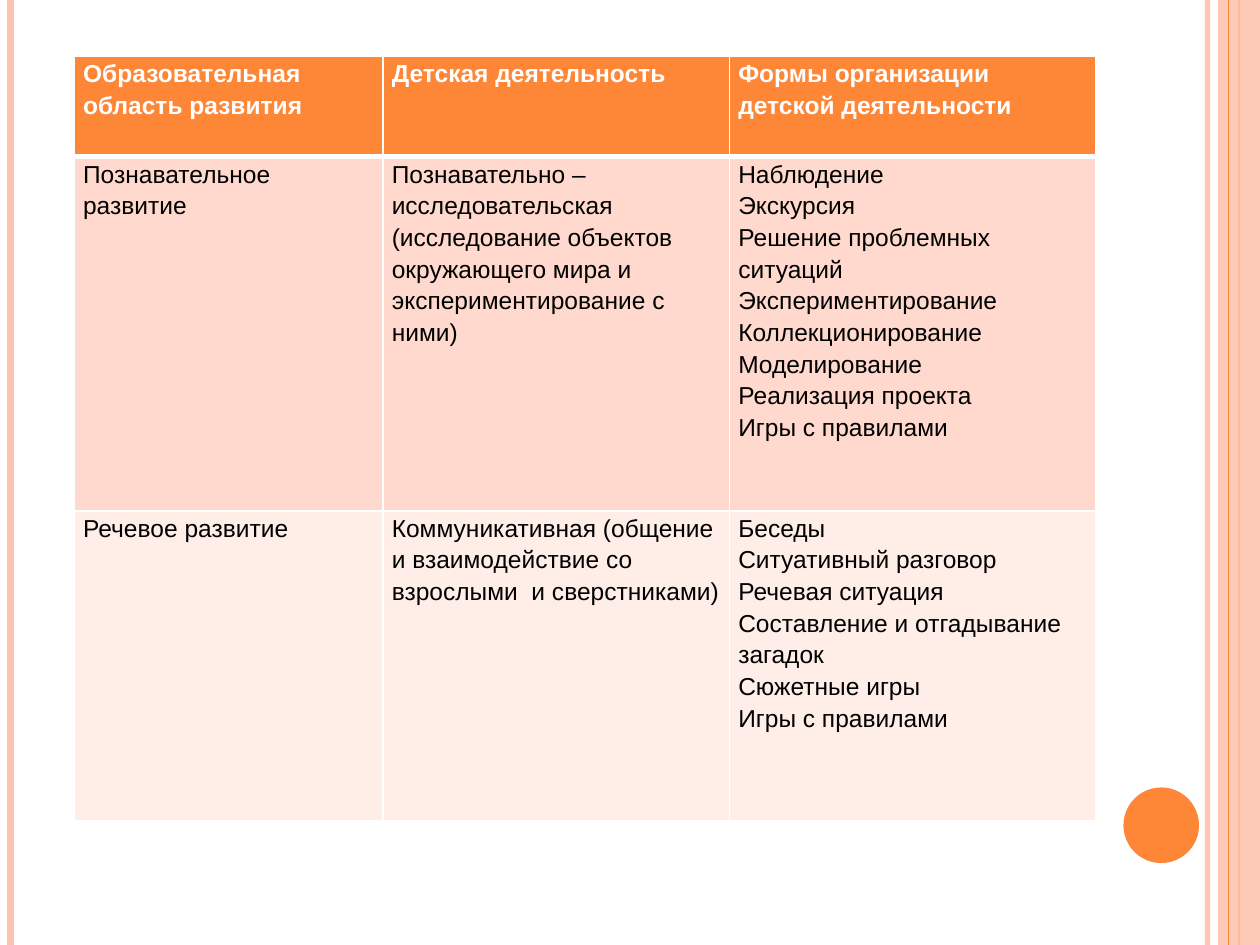
from lxml import etree
from pptx import Presentation
from pptx.dml.color import RGBColor
from pptx.enum import shapes
from pptx.oxml import ns
from pptx.util import Pt

COLORS = {
    "accent": "FE8637", "stripe": "FEC3AE", "white": "FFFFFF", "black": "000000",
    "row_dark": "FFD9CE", "row_light": "FFEDE8",
}
W, H = 720, 540

# Table content: each cell is a list of paragraphs
ROWS = [
    [["Образовательная область развития"],
     ["Детская деятельность"],
     ["Формы организации детской деятельности"]],
    [["Познавательное развитие"],
     ["Познавательно – исследовательская (исследование объектов окружающего мира "
      "и экспериментирование с ними)"],
     ["Наблюдение", "Экскурсия", "Решение проблемных ситуаций", "Экспериментирование",
      "Коллекционирование", "Моделирование", "Реализация проекта", "Игры с правилами"]],
    [["Речевое развитие"],
     ["Коммуникативная (общение и взаимодействие со взрослыми  и сверстниками)"],
     ["Беседы", "Ситуативный разговор", "Речевая ситуация",
      "Составление и отгадывание загадок", "Сюжетные игры", "Игры с правилами"]],
]
ROW_FILLS = ["accent", "row_dark", "row_light"]
TABLE_LEFT, TABLE_TOP = 42.5, 32
COL_WIDTHS = [176.4, 198, 209.5]
ROW_HEIGHTS = [57.6, 202.3, 177]

# Vertical lines: x, colour, width, opacity in percent
LINES_BEHIND = [(690, "stripe", 3, 93), (6, "stripe", 4.5, 100), (708, "accent", 1.5, 100)]
LINES_FRONT = [(702, "accent", 0.75, 100)]


def rgb(name):
    return RGBColor.from_string(COLORS[name])


def set_alpha(fill_parent, percent):
    color = fill_parent.find(".//" + ns.qn("a:srgbClr"))
    etree.SubElement(color, ns.qn("a:alpha"), val=str(percent * 1000))


def add_vertical_line(s, x, color, width, opacity):
    line = s.shapes.add_connector(shapes.MSO_CONNECTOR.STRAIGHT, Pt(x), 0, Pt(x), Pt(H))
    line.line.color.rgb = rgb(color)
    line.line.width = Pt(width)
    if opacity < 100:
        set_alpha(line.line._get_or_add_ln(), opacity)
    etree.SubElement(line._element.spPr, ns.qn("a:effectLst"))


def add_filled_shape(s, kind, left, top, width, height, color):
    sp = s.shapes.add_shape(kind, Pt(left), Pt(top), Pt(width), Pt(height))
    sp.shadow.inherit = False
    sp.fill.solid()
    sp.fill.fore_color.rgb = rgb(color)
    sp.line.fill.background()
    return sp


def set_borders(cell, widths):
    tcPr = cell._tc.get_or_add_tcPr()
    for side, width in widths.items():
        ln = etree.SubElement(tcPr, ns.qn("a:ln" + side), w=str(Pt(width)))
        fill = etree.SubElement(ln, ns.qn("a:solidFill"))
        etree.SubElement(fill, ns.qn("a:srgbClr"), val=COLORS["white"])


def fill_cell(cell, paragraphs, row):
    header = row == 0
    set_borders(cell, {"L": 1, "R": 1, "T": 3 if row == 1 else 1, "B": 3 if header else 1})
    cell.fill.solid()
    cell.fill.fore_color.rgb = rgb(ROW_FILLS[row])
    cell.margin_left = cell.margin_right = Pt(5)
    cell.margin_top = cell.margin_bottom = 0
    tf = cell.text_frame
    for i, wording in enumerate(paragraphs):
        p = tf.add_paragraph() if i else tf.paragraphs[0]
        p.line_spacing = 1.15
        r = p.add_run()
        r.text = wording
        r.font.name = "Arial"
        r.font.size = Pt(14)
        r.font.bold = header
        r.font.color.rgb = rgb("white" if header else "black")


def main():
    prs = Presentation()
    prs.slide_width, prs.slide_height = Pt(W), Pt(H)
    s = prs.slides.add_slide(prs.slide_layouts[6])
    s.background.fill.solid()
    s.background.fill.fore_color.rgb = rgb("white")

    # Side stripes and circle
    for line in LINES_BEHIND:
        add_vertical_line(s, *line)
    band = add_filled_shape(s, shapes.MSO_SHAPE.RECTANGLE, 696, 0, 24, H, "stripe")
    set_alpha(band._element.spPr, 87)
    for line in LINES_FRONT:
        add_vertical_line(s, *line)
    add_filled_shape(s, shapes.MSO_SHAPE.OVAL, 642, 450, 43.2, 43.2, "accent")

    # Table
    table = s.shapes.add_table(
        len(ROWS), len(COL_WIDTHS), Pt(TABLE_LEFT), Pt(TABLE_TOP),
        Pt(sum(COL_WIDTHS)), Pt(sum(ROW_HEIGHTS))).table
    for column, width in zip(table.columns, COL_WIDTHS):
        column.width = Pt(width)
    for i, (cells, height) in enumerate(zip(ROWS, ROW_HEIGHTS)):
        table.rows[i].height = Pt(height)
        for j, paragraphs in enumerate(cells):
            fill_cell(table.cell(i, j), paragraphs, i)

    prs.save("out.pptx")


if __name__ == "__main__":
    main()
